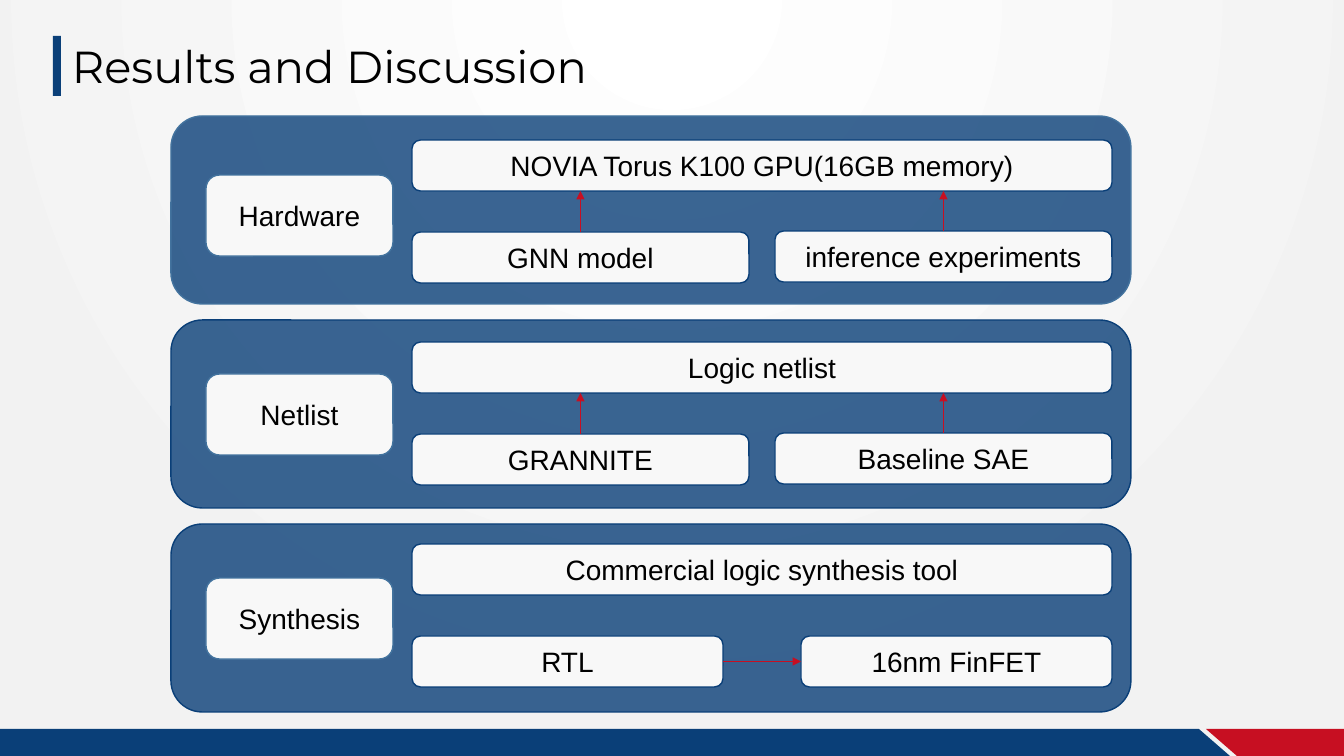
"""Build the Results and Discussion slide with its three stage panels."""
from dataclasses import dataclass

from lxml.etree import SubElement
from pptx import Presentation
from pptx.dml.color import RGBColor
from pptx.enum.shapes import MSO_CONNECTOR as Connector
from pptx.enum.shapes import MSO_SHAPE as Preset
from pptx.enum.text import MSO_ANCHOR as Anchor
from pptx.enum.text import PP_ALIGN as Align
from pptx.oxml.ns import qn
from pptx.shapes.autoshape import Shape
from pptx.shapes.base import BaseShape
from pptx.slide import Slide
from pptx.util import Emu, Pt

PX = 914400 / 100.8
COLORS = {
    "navy": "0A3F78",
    "steel": "43739E",
    "red": "C70F22",
    "card": "F8F8F8",
    "black": "000000",
    "white": "FFFFFF",
    "mist": "F2F2F2",
}
PANEL_LEFT, PANEL_TOP, PANEL_WIDTH, PANEL_HEIGHT, PANEL_STEP = 171, 116, 960, 188, 204
CARD_LEFT, CARD_TOP, CARD_WIDTH, CARD_HEIGHT, CARD_STEP = 412, 140, 700, 51, 202
LOWER_OFFSET = 92
LABEL_LEFT, LABEL_WIDTH, LABEL_HEIGHT = 206, 187, 81


@dataclass(frozen=True)
class Stage:
    name: str
    label_top: int
    edge: str
    upper: str
    left: str
    right: str
    lower_width: int
    right_lift: int = 0
    sideways: bool = False


STAGES = [
    Stage("Hardware", 175, "steel", "NOVIA Torus K100 GPU(16GB memory)",
          "GNN model", "inference experiments", 337, right_lift=1),
    Stage("Netlist", 374, "navy", "Logic netlist",
          "GRANNITE", "Baseline SAE", 337, right_lift=1),
    Stage("Synthesis", 578, "navy", "Commercial logic synthesis tool",
          "RTL", "16nm FinFET", 311, sideways=True),
]
FOOTER_BANDS = [
    ("navy", [(0, 729), (1199, 729), (1230, 756), (0, 756)]),
    ("red", [(1206, 729), (1344, 729), (1344, 756), (1237, 756)]),
]


def px(length: float) -> Emu:
    """Turn pixels into EMU."""
    return Emu(round(length * PX))


def rgb(name: str) -> RGBColor:
    """Look up a named colour."""
    return RGBColor.from_string(COLORS[name])


def write(shape: BaseShape, text: str, *, size: int = 20, font: str = "Arial",
          align: Align = Align.CENTER, anchor: Anchor = Anchor.MIDDLE) -> None:
    """Put one formatted paragraph into a shape."""
    frame = shape.text_frame
    frame.word_wrap = True
    frame.vertical_anchor = anchor
    para = frame.paragraphs[0]
    para.alignment = align
    span = para.add_run()
    span.text = text
    span.font.size = Pt(size)
    span.font.name = font
    span.font.color.rgb = rgb("black")


def paint(shape: Shape, fill: str, edge: str = "") -> None:
    """Give a shape a flat fill and an optional one-point edge."""
    shape.shadow.inherit = False
    shape.fill.solid()
    shape.fill.fore_color.rgb = rgb(fill)
    if edge:
        shape.line.color.rgb = rgb(edge)
        shape.line.width = Pt(1)
    else:
        shape.line.fill.background()


def add_box(page: Slide, left: int, top: int, width: int, height: int, *, fill: str = "card",
            edge: str = "navy", preset: Preset = Preset.ROUNDED_RECTANGLE,
            text: str = "") -> Shape:
    """Draw a painted box, with centred text if given."""
    box = page.shapes.add_shape(preset, px(left), px(top), px(width), px(height))
    paint(box, fill, edge)
    if text:
        write(box, text)
    return box


def add_arrow(page: Slide, start: Shape, site: int, end_x: int, end_y: int,
              target: Shape | None = None) -> None:
    """Draw a thin red arrow from a box side, joined to a target's left side if given."""
    arrow = page.shapes.add_connector(Connector.STRAIGHT, px(end_x), px(end_y),
                                      px(end_x), px(end_y))
    arrow.begin_connect(start, site)
    if target is not None:
        arrow.end_connect(target, 1)
    arrow.line.color.rgb = rgb("red")
    arrow.line.width = Pt(0.5)
    properties = arrow.element.spPr
    SubElement(properties.find(qn("a:ln")), qn("a:tailEnd"), type="triangle")
    SubElement(properties, qn("a:effectLst"))


def add_backdrop(page: Slide) -> None:
    """Set the circular background gradient, the footer bands and the title bar."""
    fill = page.background.fill
    fill.gradient()
    for stop, name in zip(fill.gradient_stops, ("white", "mist")):
        stop.color.rgb = rgb(name)
    gradient = page.element.find(".//" + qn("a:gradFill"))
    gradient.remove(gradient.find(qn("a:lin")))
    circle = SubElement(gradient, qn("a:path"), path="circle")
    SubElement(circle, qn("a:fillToRect"), l="50000", t="-80000", r="50000", b="180000")
    for color, (first, *others) in FOOTER_BANDS:
        builder = page.shapes.build_freeform(*first, scale=PX)
        builder.add_line_segments(others, close=True)
        paint(builder.convert_to_shape(), color)
    add_box(page, 53, 36, 8, 60, fill="navy", edge="", preset=Preset.RECTANGLE)


def add_stage(page: Slide, index: int, stage: Stage) -> None:
    """Draw one panel with its label, cards and arrows."""
    panel = add_box(page, PANEL_LEFT, PANEL_TOP + index * PANEL_STEP, PANEL_WIDTH,
                    PANEL_HEIGHT, fill="navy", edge=stage.edge)
    color = panel.element.spPr.find(qn("a:solidFill")).find(qn("a:srgbClr"))
    SubElement(color, qn("a:alpha"), val="80000")
    add_box(page, LABEL_LEFT, stage.label_top, LABEL_WIDTH, LABEL_HEIGHT,
            edge="steel", text=stage.name)

    top = CARD_TOP + index * CARD_STEP
    lower_top = top + LOWER_OFFSET
    width = stage.lower_width
    right_left = CARD_LEFT + CARD_WIDTH - width
    add_box(page, CARD_LEFT, top, CARD_WIDTH, CARD_HEIGHT, text=stage.upper)
    left = add_box(page, CARD_LEFT, lower_top, width, CARD_HEIGHT, text=stage.left)
    right = add_box(page, right_left, lower_top - stage.right_lift, width, CARD_HEIGHT,
                    text=stage.right)
    if stage.sideways:
        add_arrow(page, left, 3, right_left, lower_top + CARD_HEIGHT // 2, right)
    else:
        for card, card_left in ((left, CARD_LEFT), (right, right_left)):
            add_arrow(page, card, 0, card_left + width / 2, top + CARD_HEIGHT)


def main() -> None:
    """Assemble and save the deck."""
    deck = Presentation()
    deck.slide_width, deck.slide_height = px(1344), px(756)
    page = deck.slides.add_slide(deck.slide_layouts[6])
    add_backdrop(page)
    title = page.shapes.add_textbox(px(62), px(34), px(907), px(64))
    write(title, "Results and Discussion", size=32, font="Montserrat",
          align=Align.LEFT, anchor=Anchor.TOP)
    for index, stage in enumerate(STAGES):
        add_stage(page, index, stage)
    deck.save("out.pptx")


if __name__ == "__main__":
    main()
